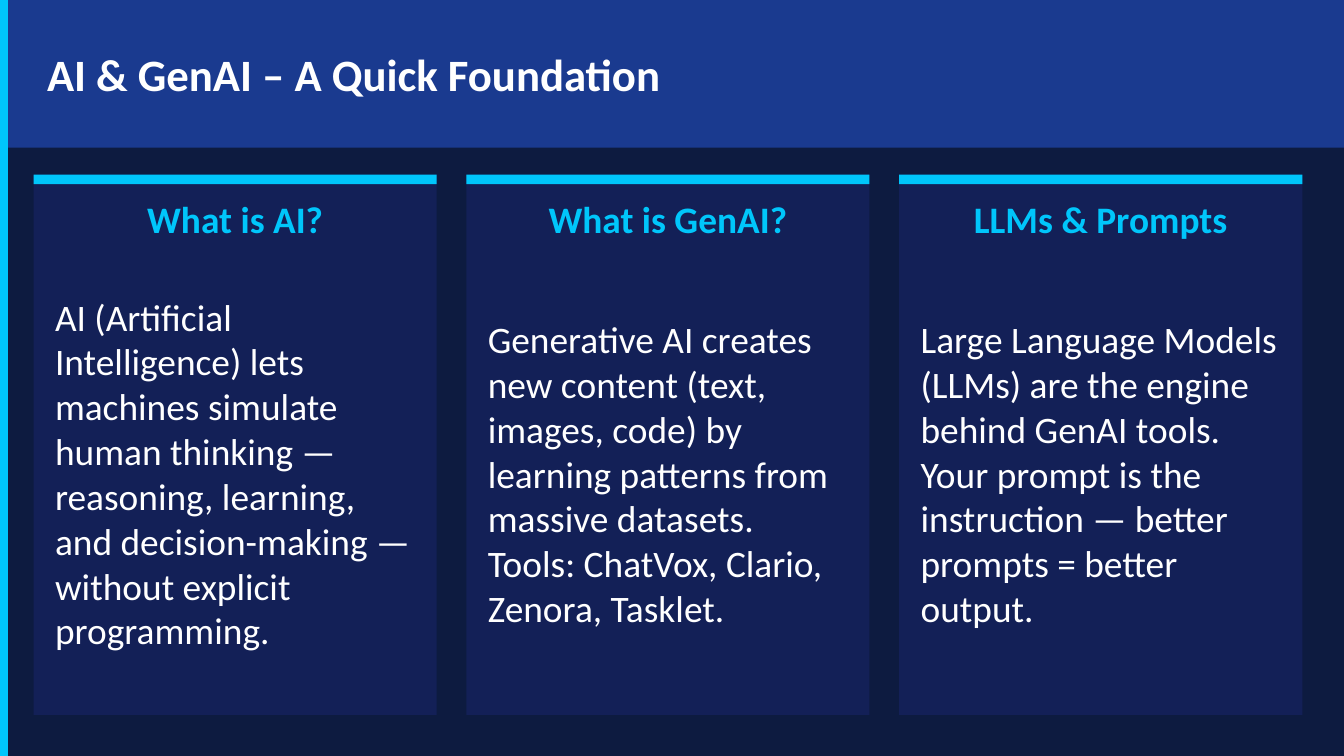
from dataclasses import dataclass

from pptx import Presentation
from pptx import util as u
from pptx.dml.color import RGBColor
from pptx.enum import shapes, text

TITLE = "AI & GenAI – A Quick Foundation"
CARDS = [
    ("What is AI?",
     "AI (Artificial Intelligence) lets machines simulate human thinking — "
     "reasoning, learning, and decision-making — without explicit programming."),
    ("What is GenAI?",
     "Generative AI creates new content (text, images, code) by learning "
     "patterns from massive datasets. Tools: ChatVox, Clario, Zenora, Tasklet."),
    ("LLMs & Prompts",
     "Large Language Models (LLMs) are the engine behind GenAI tools. "
     "Your prompt is the instruction — better prompts = better output."),
]


@dataclass(frozen=True)
class Theme:
    font: str = "Calibri"
    background: str = "0D1B40"
    header: str = "1A3A8F"
    card: str = "132057"
    accent: str = "00C6FB"
    text: str = "FFFFFF"
    title_size: int = 24
    card_size: int = 20


THEME = Theme()
PX = u.Inches(1) // 200
WIDTH, HEIGHT = 2000, 1125
HEADER_HEIGHT = 220
CARD_LEFT, CARD_TOP = 50, 260
CARD_WIDTH, CARD_HEIGHT, CARD_GAP = 600, 804, 44
BODY_MARGIN = 20


def scaled(*lengths):
    return [length * PX for length in lengths]


def add_block(page, bounds, color):
    block = page.shapes.add_shape(shapes.MSO_SHAPE.RECTANGLE, *scaled(*bounds))
    block.shadow.inherit = False
    block.fill.solid()
    block.fill.fore_color.rgb = RGBColor.from_string(color)
    block.line.fill.background()


def write(box, words, size, color, bold=False, align=text.PP_ALIGN.LEFT, inset=None):
    frame = box.text_frame
    frame.word_wrap = True
    frame.auto_size = text.MSO_AUTO_SIZE.NONE
    frame.vertical_anchor = text.MSO_ANCHOR.MIDDLE
    if inset is not None:
        frame.margin_left = frame.margin_right = inset * PX
        frame.margin_top = frame.margin_bottom = inset * PX
    para = frame.paragraphs[0]
    para.alignment = align
    span = para.add_run()
    span.text = words
    span.font.name = THEME.font
    span.font.size = u.Pt(size)
    span.font.bold = bold
    span.font.color.rgb = RGBColor.from_string(color)


def add_title(page):
    box = page.shapes.title
    box.left, box.top, box.width, box.height = scaled(50, 0, 1900, HEADER_HEIGHT)
    write(box, TITLE, THEME.title_size, THEME.text, bold=True)
    page.shapes._spTree.append(box._element)


def add_card(page, left, heading, body):
    add_block(page, (left, CARD_TOP, CARD_WIDTH, CARD_HEIGHT), THEME.card)
    add_block(page, (left, CARD_TOP, CARD_WIDTH, 14), THEME.accent)
    heading_box = page.shapes.add_textbox(*scaled(left, CARD_TOP + 20, CARD_WIDTH, 90))
    write(heading_box, heading, THEME.card_size, THEME.accent, bold=True,
          align=text.PP_ALIGN.CENTER, inset=0)
    body_box = page.shapes.add_textbox(
        *scaled(left + BODY_MARGIN, CARD_TOP + 120, CARD_WIDTH - 2 * BODY_MARGIN, 648))
    write(body_box, body, THEME.card_size, THEME.text, inset=12)


def main():
    deck = Presentation()
    deck.slide_width, deck.slide_height = scaled(WIDTH, HEIGHT)
    page = deck.slides.add_slide(deck.slide_layouts[5])
    page.background.fill.solid()
    page.background.fill.fore_color.rgb = RGBColor.from_string(THEME.background)

    add_block(page, (0, 0, WIDTH, HEADER_HEIGHT), THEME.header)
    add_block(page, (0, 0, 12, HEIGHT), THEME.accent)
    add_title(page)
    for index, (heading, body) in enumerate(CARDS):
        add_card(page, CARD_LEFT + index * (CARD_WIDTH + CARD_GAP), heading, body)

    deck.save("out.pptx")


if __name__ == "__main__":
    main()
